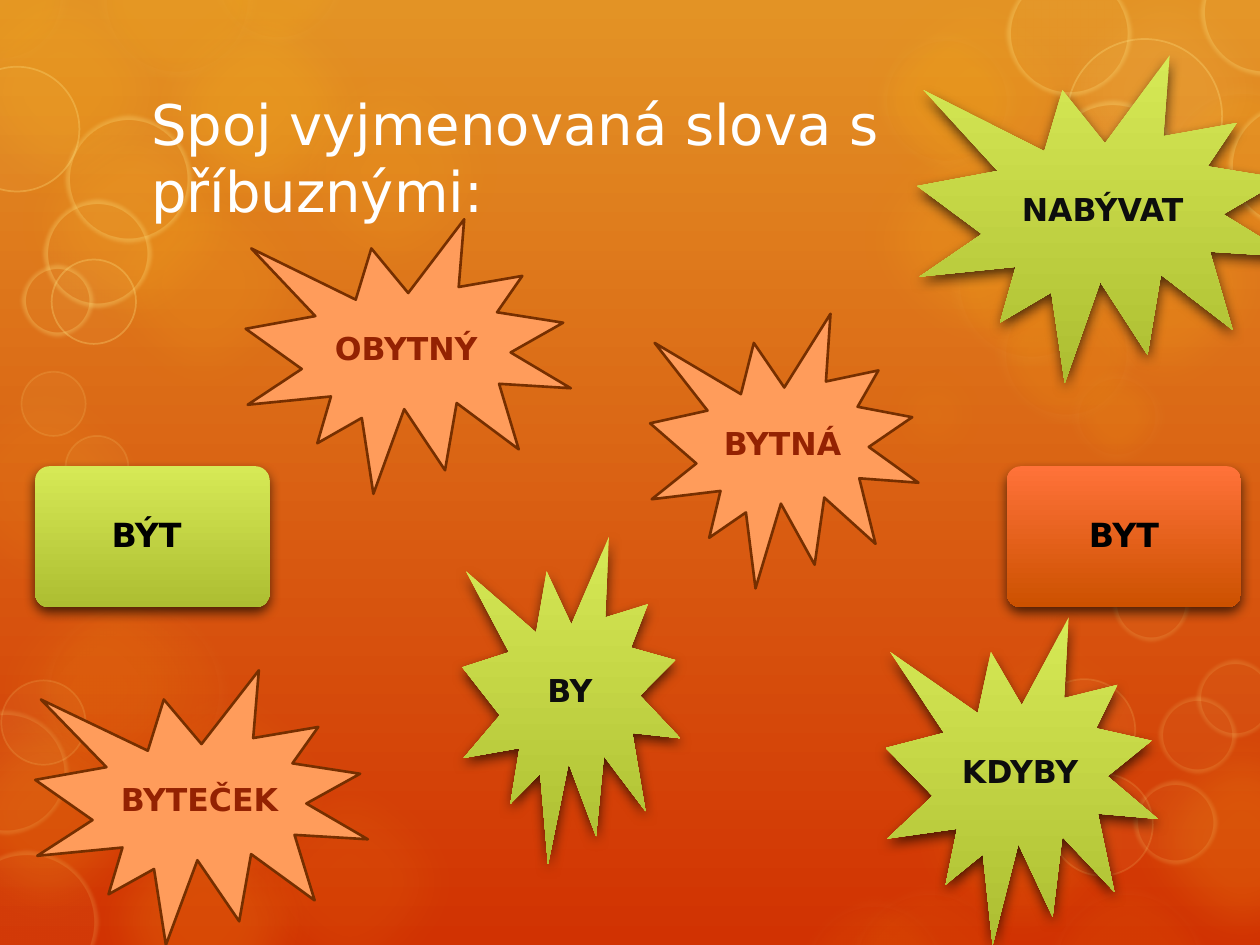
import lxml.etree
import pptx
import pptx.dml.color
import pptx.enum.shapes
import pptx.enum.text
import pptx.oxml.ns
import pptx.util

# ---- Content: all places and sizes are in inches ----
COLORS = {
    "sky": "E39325", "ember": "D13202", "gold": "FDC61B", "cream": "FFE281",
    "rim": "FEEBAE", "white": "FFFFFF", "black": "000000", "ink": "0D0D0D",
    "lime": "D6E956", "olive": "ADBE31", "coral": "FF7239", "rust": "CC5100",
    "peach": "FF9C5B", "brown": "762F00", "brick": "942202",
}
FONT = "DejaVu Sans"
INCH = 2.54
SLIDE_SIZE = (10, 7.5)

TITLE = ("Spoj vyjmenovaná slova s příbuznými:", (1.1, 0.74, 7.79, 1.01))
CARDS = [  # text, left, gradient
    ("BÝT ", 0.28, ("lime", "olive")),
    ("BYT", 7.99, ("coral", "rust")),
]
CARD_TOP, CARD_WIDTH, CARD_HEIGHT = 3.7, 1.86, 1.12
STARS = [  # text, style, left, top, width
    ("BYTEČEK", "flat", 0.28, 5.32, 2.64),
    ("OBYTNÝ", "flat", 1.95, 1.74, 2.58),
    ("KDYBY", "glossy", 7.03, 4.9, 2.16),
    ("NABÝVAT", "glossy", 7.28, 0.44, 2.98),
    ("BY", "glossy", 3.67, 4.26, 1.73),
    ("BYTNÁ", "flat", 5.16, 2.49, 2.13),
]
STAR_STYLES = {
    "flat": {"height": 2.18, "color": "brick"},
    "glossy": {"height": 2.6, "color": "ink"},
}

# Bubbles: left, top, diameter, with the fill opacity last for the glows
GLOW = 2.09
GLOWS = [
    (-0.26, 4.42, GLOW, 8), (0.57, 1.2, GLOW, 10), (2.05, 0.31, GLOW, 10),
    (0.57, 6.27, GLOW, 16), (-0.55, -0.32, GLOW, 14), (1.01, -0.18, GLOW, 20),
    (0, 0.72, GLOW, 15), (6.69, -0.29, GLOW, 10), (8.2, 1.2, GLOW, 15),
    (8.81, 5.62, GLOW, 16), (7.29, 4.77, GLOW, 5), (-0.68, 5.41, GLOW, 16),
    (0.77, 5.24, GLOW, 8), (6.69, 0.86, GLOW, 15), (7.06, 5.62, GLOW, 10),
    (1.73, 5.96, GLOW, 8), (-0.69, 2.82, GLOW, 8), (6.75, 2.62, 1.33, 10),
]
HALOS = [
    (9.18, 0.65, 1.37), (6.94, 0.23, 1.14), (7.52, 1.59, 1.33), (7.89, 2.24, 1.14),
    (8.47, 2.91, 0.79), (0.75, -0.65, 1.31), (1.64, -0.74, 1.13), (-0.57, -0.58, 1.14),
]
FAINT_HALOS = [(0.3, 4.73, 1.53), (6.32, 7.1, 1.24), (6.7, 7.01, 1.36), (8.29, 7.01, 1.32)]
DIM_RINGS = [
    (0.01, 5.4, 0.67), (8.34, 6.14, 0.81), (8.2, 5.39, 0.81),
    (0.17, 2.95, 0.51), (0.52, 3.46, 0.5),
]
DIM_SOFT_RINGS = [
    (-0.35, 6.75, 1.13), (-0.44, 5.64, 0.98), (7.63, 5.73, 0.81), (9, 6.2, 0.66),
    (8.83, 4.48, 0.61), (9.2, 5.53, 0.61), (9.5, 5.24, 0.61), (0.3, 3.7, 0.39),
]
RINGS = [(-0.36, 0.53, 0.99), (0.41, 2.06, 0.67), (8.47, 0.31, 1.23), (8.17, 1.45, 0.67)]
SOFT_RINGS = [
    (0.52, 0.92, 1), (0.35, 1.59, 0.85), (0.17, 2.1, 0.57), (7.99, -0.23, 0.99),
    (9.53, -0.4, 1), (9.75, 0.82, 0.99), (8.3, 0.8, 1.06),
]
BUBBLE_GROUPS = [  # bubbles, fill, fill opacity, line, soft edge in points
    (GLOWS, "gold", None, None, 25),
    ([(8.2, -0.32, GLOW)], "cream", 10, None, 25),
    (HALOS, "gold", 10, ("rim", 14, 6), 12),
    (FAINT_HALOS, "gold", 6, ("rim", 14, 4), 12),
    (DIM_RINGS, "cream", 5, ("cream", 1, 15), 0),
    (DIM_SOFT_RINGS, "cream", 5, ("cream", 5, 15), 2.5),
    (RINGS, "cream", 5, ("cream", 1, 30), 0),
    (SOFT_RINGS, "cream", 5, ("cream", 5, 30), 2.5),
]


# ---- Helpers ----
def length(inches):
    return pptx.util.Cm(inches * INCH)


def rgb(name):
    return pptx.dml.color.RGBColor.from_string(COLORS[name])


def add_node(parent, tag, **attributes):
    values = {key: str(value) for key, value in attributes.items()}
    return lxml.etree.SubElement(parent, pptx.oxml.ns.qn(tag), values)


def set_solid(fill, name):
    fill.solid()
    fill.fore_color.rgb = rgb(name)


def set_gradient(fill, names):
    fill.gradient()
    fill.gradient_angle = 270
    for position, (stop, name) in enumerate(zip(fill.gradient_stops, names)):
        stop.color.rgb = rgb(name)
        stop.position = position


def set_opacity(shape, query, percent):
    for color in shape.element.spPr.xpath(query):
        add_node(color, "a:alpha", val=percent * 1000)


def add_effect(shape, tag, **attributes):
    return add_node(shape.element.spPr.find(pptx.oxml.ns.qn("a:effectLst")), tag, **attributes)


def add_drop_shadow(shape):
    shadow = add_effect(shape, "a:outerShdw", blurRad=pptx.util.Pt(7), dist=pptx.util.Pt(3),
                        dir=5400000, algn="ctr", rotWithShape=0)
    color = add_node(shadow, "a:srgbClr", val=COLORS["black"])
    add_node(color, "a:alpha", val=65000)


def add_preset(slide, kind, box):
    shape = slide.shapes.add_shape(kind, *map(length, box))
    shape.shadow.inherit = False
    shape.line.fill.background()
    return shape


def write(shape, text, size, color, bold=True, align="CENTER", spacing=1.0):
    frame = shape.text_frame
    frame.word_wrap = True
    frame.vertical_anchor = pptx.enum.text.MSO_ANCHOR.MIDDLE
    paragraph = frame.paragraphs[0]
    paragraph.alignment = pptx.enum.text.PP_ALIGN[align]
    paragraph.line_spacing = spacing
    run = paragraph.add_run()
    run.text = text
    formats = {"name": FONT, "size": pptx.util.Pt(size), "bold": bold}
    for attribute, value in formats.items():
        setattr(run.font, attribute, value)
    run.font.color.rgb = rgb(color)


# ---- Slide ----
SHAPES = pptx.enum.shapes.MSO_SHAPE
presentation = pptx.Presentation()
presentation.slide_width, presentation.slide_height = map(length, SLIDE_SIZE)
slide = presentation.slides.add_slide(presentation.slide_layouts[6])
set_gradient(slide.background.fill, ("sky", "ember"))

# Bubbles in the background
for bubbles, fill, opacity, line, soft_edge in BUBBLE_GROUPS:
    for left, top, diameter, *own_opacity in bubbles:
        bubble = add_preset(slide, SHAPES.OVAL, (left, top, diameter, diameter))
        set_solid(bubble.fill, fill)
        set_opacity(bubble, "./a:solidFill/a:srgbClr", own_opacity[0] if own_opacity else opacity)
        if line:
            name, width, line_opacity = line
            set_solid(bubble.line.fill, name)
            bubble.line.width = pptx.util.Pt(width)
            set_opacity(bubble, "./a:ln/a:solidFill/a:srgbClr", line_opacity)
        if soft_edge:
            add_effect(bubble, "a:softEdge", rad=pptx.util.Pt(soft_edge))

# Title
title_text, title_box = TITLE
title = slide.shapes.add_textbox(*map(length, title_box))
write(title, title_text, 32, "white", bold=False, align="LEFT")

# Word cards
for text, left, gradient in CARDS:
    card = add_preset(slide, SHAPES.ROUNDED_RECTANGLE, (left, CARD_TOP, CARD_WIDTH, CARD_HEIGHT))
    card.adjustments[0] = 0.1
    set_gradient(card.fill, gradient)
    add_drop_shadow(card)
    write(card, text, 19, "black", spacing=0.9)

# Stars with related words
for text, style, left, top, width in STARS:
    star_style = STAR_STYLES[style]
    star = add_preset(slide, SHAPES.EXPLOSION1, (left, top, width, star_style["height"]))
    if style == "flat":
        set_solid(star.fill, "peach")
        set_solid(star.line.fill, "brown")
        star.line.width = pptx.util.Pt(1.5)
    else:
        set_gradient(star.fill, ("lime", "olive"))
        add_drop_shadow(star)
    write(star, text, 18, star_style["color"])

presentation.save("out.pptx")
